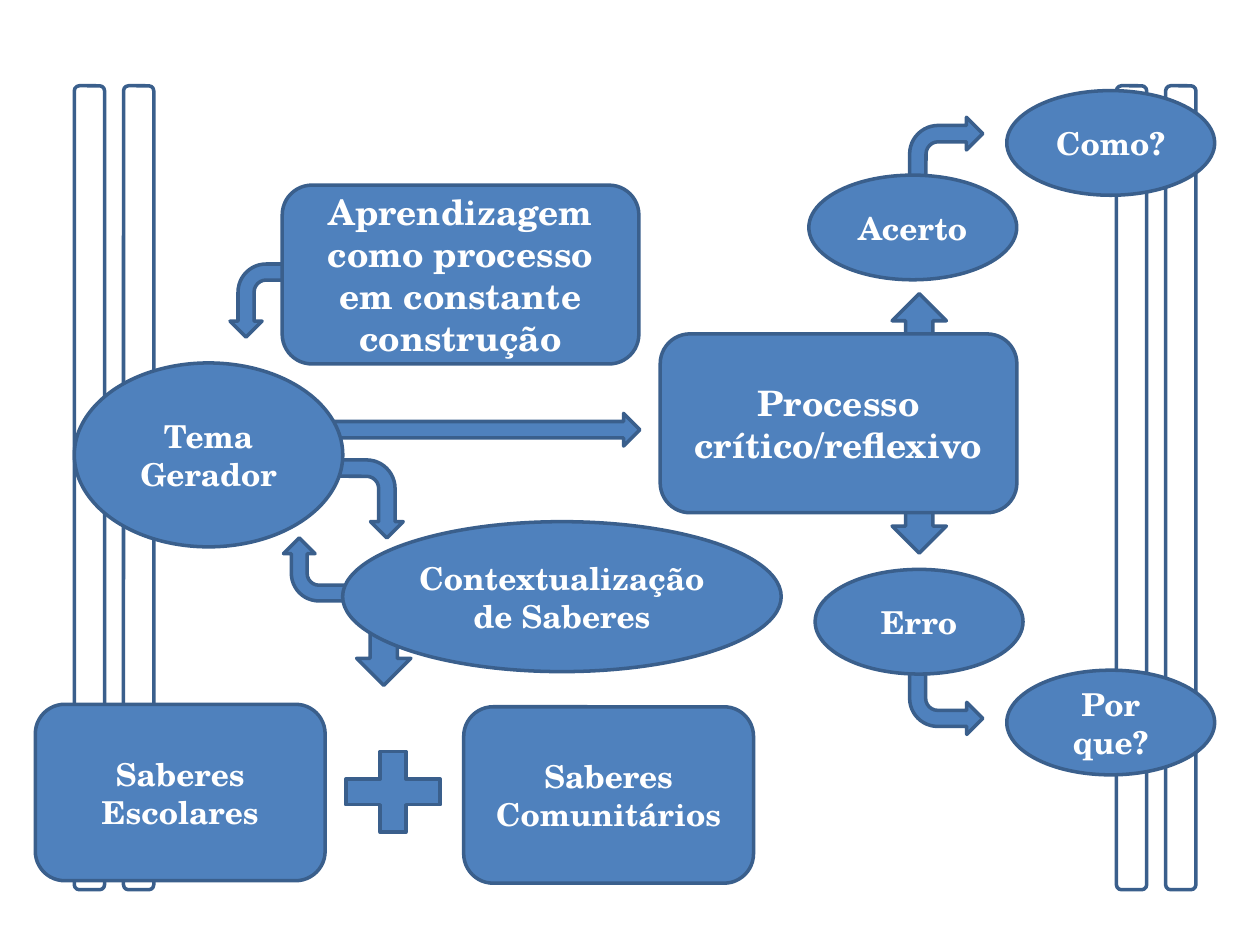
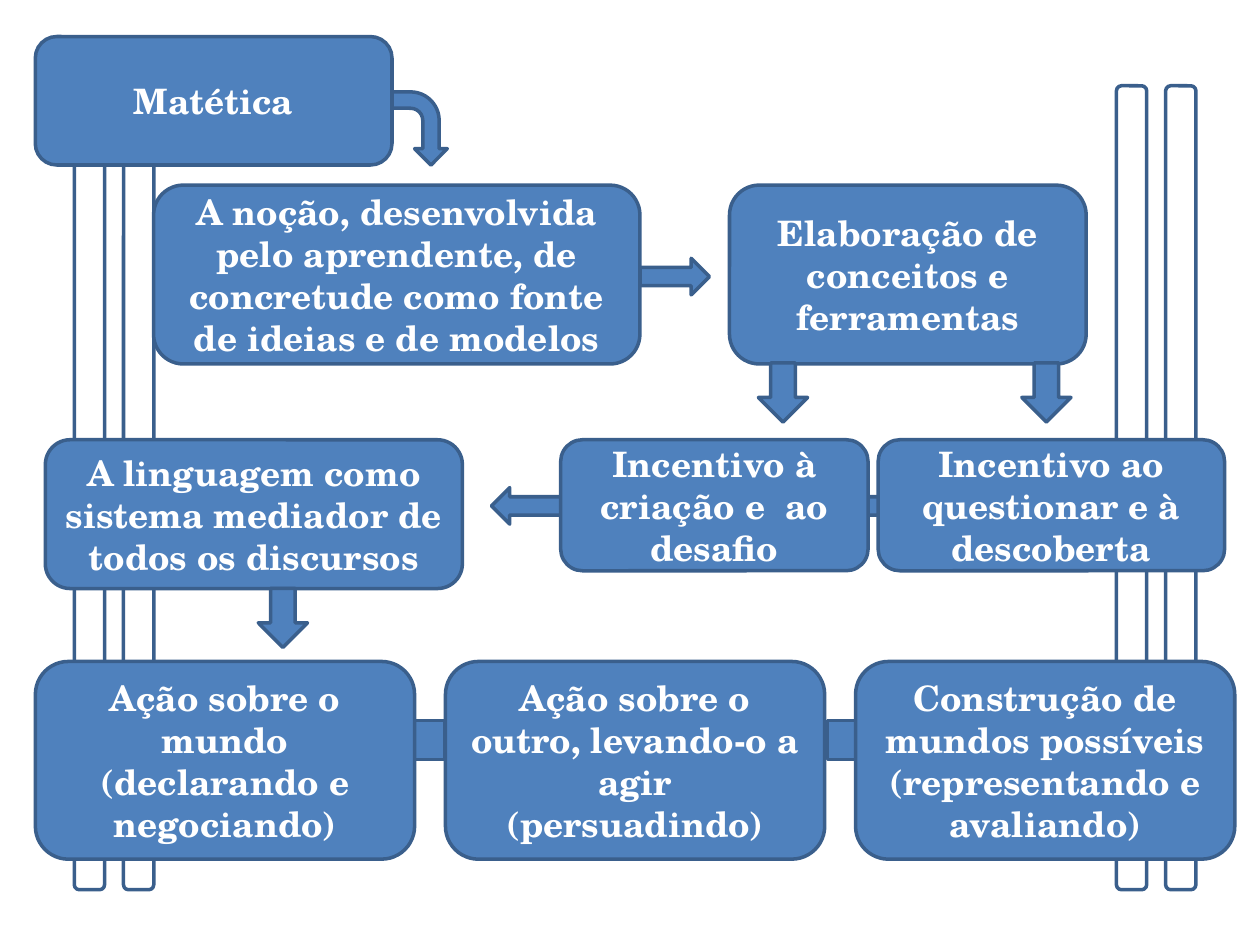
from pptx import Presentation
from pptx.dml.color import RGBColor
from pptx.enum.shapes import MSO_SHAPE as KIND
from pptx.enum.text import MSO_ANCHOR, PP_ALIGN
from pptx.util import Pt

# Shared look
FONT = "TeX Gyre Schola"
WHITE, BLUE, EDGE = "FFFFFF", "4F81BD", "3A5F8C"

# Shared sizes in points
OVAL = (118.8, 59.8)
CARD = (203.8, 102.2)
BASE = (165.6, 100.8)
HEAD = (31, 31)
DROP = (28.1, 33.8)
ACT = (216.7, 113)


def color(code):
    return RGBColor.from_string(code)


def draw(slide, kind, pos, size, turn=0, flip=False, fill=BLUE):
    shape = slide.shapes.add_shape(kind, *(Pt(n) for n in (*pos, *size)))
    shape.shadow.inherit = False
    shape.fill.solid()
    shape.fill.fore_color.rgb = color(fill)
    shape.line.color.rgb = color(EDGE)
    shape.line.width = Pt(2)
    shape.rotation = turn
    if flip:
        shape.element.spPr.get_or_add_xfrm().set("flipV", "1")
    return shape


def label(shape, text, size):
    frame = shape.text_frame
    frame.word_wrap = True
    frame.vertical_anchor = MSO_ANCHOR.MIDDLE
    para = frame.paragraphs[0]
    para.alignment = PP_ALIGN.CENTER
    run = para.add_run()
    run.text = text
    run.font.name = FONT
    run.font.size = Pt(size)
    run.font.bold = True
    run.font.color.rgb = color(WHITE)


def box(slide, text, pos, size, points=20):
    label(draw(slide, KIND.ROUNDED_RECTANGLE, pos, size), text, points)


def oval(slide, text, pos, size=OVAL):
    label(draw(slide, KIND.OVAL, pos, size), text, 18)


def bend(slide, pos, size=(41.8, 37.4), turn=0, flip=False):
    draw(slide, KIND.BENT_ARROW, pos, size, turn, flip)


def down(slide, pos, size, turn=0):
    draw(slide, KIND.DOWN_ARROW, pos, size, turn)


def right(slide, pos, size, turn=0):
    draw(slide, KIND.RIGHT_ARROW, pos, size, turn)


def start(deck):
    """Add a slide with a pair of tall bars on each side."""
    slide = deck.slides.add_slide(deck.slide_layouts[6])
    for left in (638, 42.5):
        for step in (0, 28.1):
            draw(slide, KIND.ROUNDED_RECTANGLE, (left + step, 49),
                 (17.3, 459.4), fill=WHITE)
    return slide


def themes(deck):
    slide = start(deck)

    # Knowledge: school plus community
    bend(slide, (189.4, 266.4), (44.6, 37.4), 90)
    bend(slide, (162.7, 306.7), (36, 37.4), 270)
    box(slide, "Saberes Comunitários", (265, 403.9), BASE, 18)
    box(slide, "Saberes Escolares", (20.2, 402.5), BASE, 18)
    draw(slide, KIND.MATH_PLUS, (187.9, 421.2), (73.4, 62.6))
    down(slide, (203.8, 360.7), HEAD)
    oval(slide, "Contextualização de Saberes", (195.8, 298.1), (250.6, 85.7))

    # Central theme
    bend(slide, (128.9, 153.4), (41.8, 36.7), 90, True)
    right(slide, (181.4, 236.2), (184.3, 18.7))
    oval(slide, "Tema Gerador", (42.5, 207.4), (153.4, 105.1))
    box(slide, "Aprendizagem como processo em constante construção",
        (161.3, 105.8), CARD)

    # Critical process and its two outcomes
    oval(slide, "Como?", (575.3, 51.8))
    oval(slide, "Por que?", (575.3, 383))
    down(slide, (509.8, 285.1), HEAD)
    down(slide, (509.8, 167.8), HEAD, 180)
    box(slide, "Processo crítico/reflexivo", (377.3, 190.8), CARD)
    bend(slide, (519.8, 67))
    oval(slide, "Acerto", (462.2, 100.1))
    bend(slide, (519.8, 383), (41.8, 36.7), flip=True)
    oval(slide, "Erro", (465.8, 325.4))


def mathetics(deck):
    slide = start(deck)

    # Concept and tools
    bend(slide, (216, 54.7), turn=90)
    box(slide, "Matética", (20.2, 20.9), (203.8, 73.4))
    box(slide, "A noção, desenvolvida pelo aprendente, de concretude como "
        "fonte de ideias e de modelos", (87.8, 105.8), (277.9, 102.2))
    right(slide, (365.8, 147.6), (39.6, 20.9))
    box(slide, "Elaboração de conceitos e ferramentas", (416.9, 105.8), CARD)

    # Incentives leading to language
    for left in (433.4, 583.9):
        down(slide, (left, 207.4), DROP)
    right(slide, (280.8, 278.6), (283.7, 20.9), 180)
    box(slide, "Incentivo à criação e  ao desafio",
        (320.4, 251.3), (175.7, 74.9))
    box(slide, "Incentivo ao questionar e à descoberta",
        (501.8, 251.3), (198, 74.9))
    box(slide, "A linguagem como sistema mediador de todos os discursos",
        (25.9, 251.3), (238.3, 85))
    down(slide, (147.6, 336.2), DROP)

    # Linked actions
    for left in (236.9, 473):
        draw(slide, KIND.RECTANGLE, (left, 411.8), (17.3, 22.3))
    acts = ("Ação sobre o mundo (declarando e negociando)",
            "Ação sobre o outro, levando-o a agir (persuadindo)",
            "Construção de mundos possíveis (representando e avaliando)")
    for i, text in enumerate(acts):
        box(slide, text, (20.2 + i * 234.35, 378), ACT)


def main():
    deck = Presentation()
    deck.slide_width, deck.slide_height = Pt(720), Pt(540)
    themes(deck)
    mathetics(deck)
    deck.save("out.pptx")


if __name__ == "__main__":
    main()
